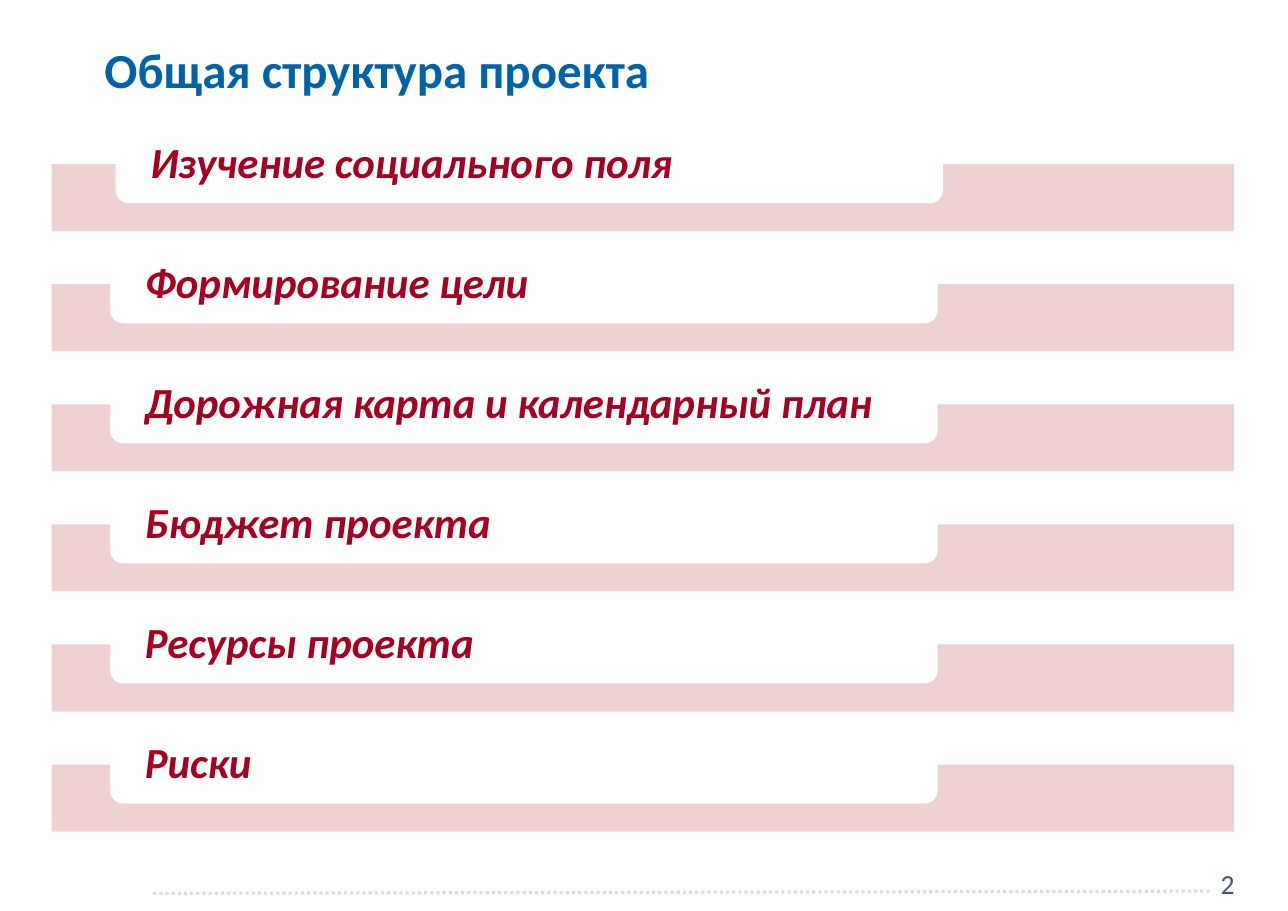
from lxml import etree
from pptx import Presentation
from pptx.dml.color import RGBColor
from pptx.enum import dml, shapes, text
from pptx.oxml import ns
from pptx.util import Inches, Pt

TITLE = "Общая структура проекта"
PAGE = "2"
SECTIONS = [
    "Изучение социального поля",
    "Формирование цели",
    "Дорожная карта и календарный план",
    "Бюджет проекта",
    "Ресурсы проекта",
    "Риски",
]
FONT = "Calibri"
BLUE, RED, PINK, WHITE = "0062A7", "A50021", "EFCCCE", "FFFFFF"
SLATE, PALE = "49556E", "D8DCE5"

BAND_LEFT, BAND_TOP, BAND_W, BAND_H = 0.47, 1.49, 10.73, 0.61
LABEL_LEFT, LABEL_W, LABEL_H = 1.0, 7.51, 0.71
LABEL_RISE = 0.355  # how far a label stands above its band
FIRST_SHIFT = 0.05  # the first label sits slightly to the right
PITCH = 1.09


def rgb(value):
    return RGBColor.from_string(value)


def add_box(s, kind, box, color):
    sp = s.shapes.add_shape(kind, *map(Inches, box))
    sp.shadow.inherit = False
    sp.fill.solid()
    sp.fill.fore_color.rgb = rgb(color)
    sp.line.fill.background()
    return sp


def write(sp, words, size, color, anchor, bold=False, italic=False, spacing=None):
    tf = sp.text_frame
    tf.word_wrap = True
    tf.vertical_anchor = anchor
    p = tf.paragraphs[0]
    p.text = words
    p.alignment = text.PP_ALIGN.LEFT
    p.line_spacing = spacing
    p.font.name, p.font.size = FONT, Pt(size)
    p.font.bold, p.font.italic = bold, italic
    p.font.color.rgb = rgb(color)


def add_section(s, index, words):
    top = BAND_TOP + index * PITCH
    band = add_box(s, shapes.MSO_SHAPE.RECTANGLE,
                   (BAND_LEFT, top, BAND_W, BAND_H), PINK)
    color = band.fill._xPr.find(".//" + ns.qn("a:srgbClr"))
    etree.SubElement(color, ns.qn("a:alpha"), val="90000")

    left = LABEL_LEFT + (FIRST_SHIFT if index == 0 else 0)
    label = add_box(s, shapes.MSO_SHAPE.ROUNDED_RECTANGLE,
                    (left, top - LABEL_RISE, LABEL_W, LABEL_H), WHITE)
    tf = label.text_frame
    tf.margin_left = tf.margin_right = Inches(0.28)
    tf.margin_top = tf.margin_bottom = 0
    write(label, words, 28, RED, text.MSO_ANCHOR.MIDDLE, True, True, 0.9)


def add_footer(s):
    line = s.shapes.add_connector(
        shapes.MSO_CONNECTOR.STRAIGHT,
        Inches(1.39), Inches(8.11), Inches(10.98), Inches(8.09))
    line.line.color.rgb = rgb(PALE)
    line.line.width = Pt(2)
    line.line.dash_style = dml.MSO_LINE.ROUND_DOT
    etree.SubElement(line._element.spPr, ns.qn("a:effectLst"))
    number = s.shapes.add_textbox(*map(Inches, (10.98, 7.82, 0.53, 0.3)))
    write(number, PAGE, 18, SLATE, text.MSO_ANCHOR.TOP)


def main():
    prs = Presentation()
    prs.slide_width, prs.slide_height = Inches(11.69), Inches(8.27)
    s = prs.slides.add_slide(prs.slide_layouts[6])
    add_footer(s)
    title = s.shapes.add_textbox(*map(Inches, (0.85, 0.34, 10.47, 0.61)))
    write(title, TITLE, 32, BLUE, text.MSO_ANCHOR.BOTTOM, bold=True, spacing=0.9)
    for index, words in enumerate(SECTIONS):
        add_section(s, index, words)
    prs.save("out.pptx")


if __name__ == "__main__":
    main()
